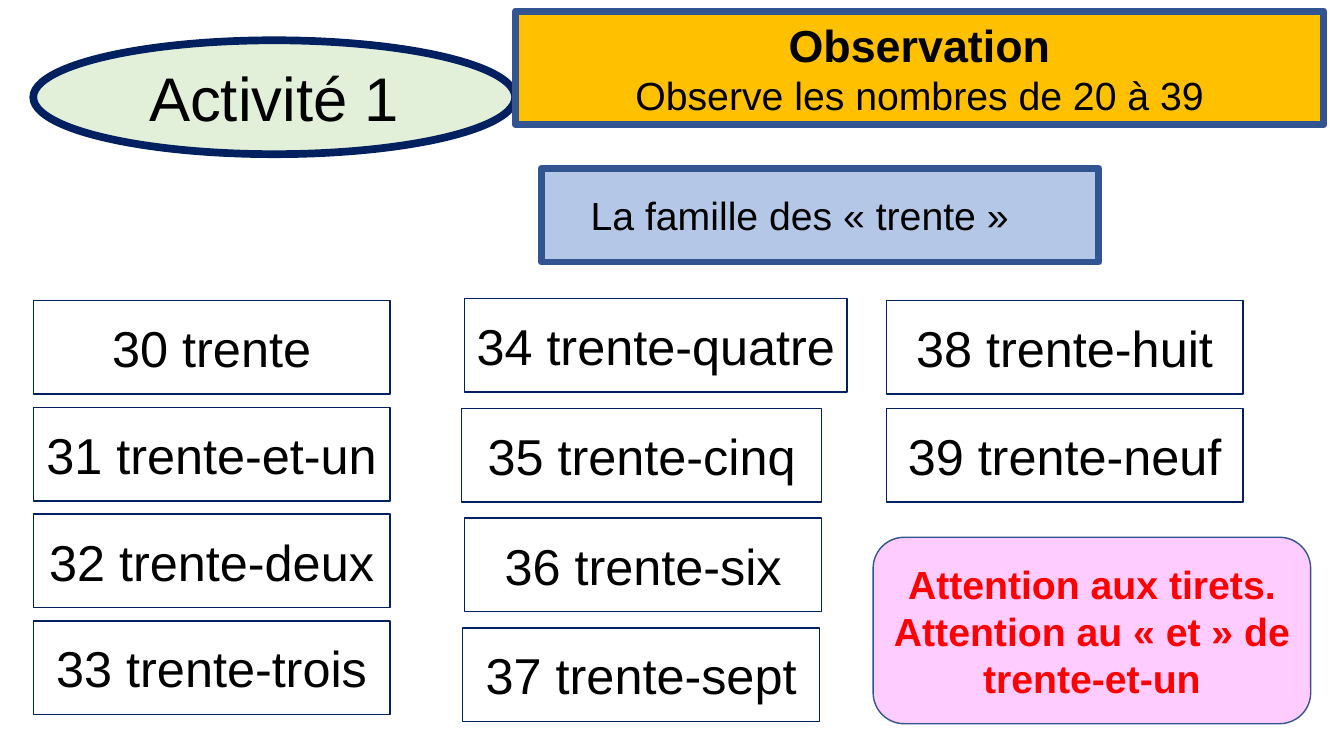
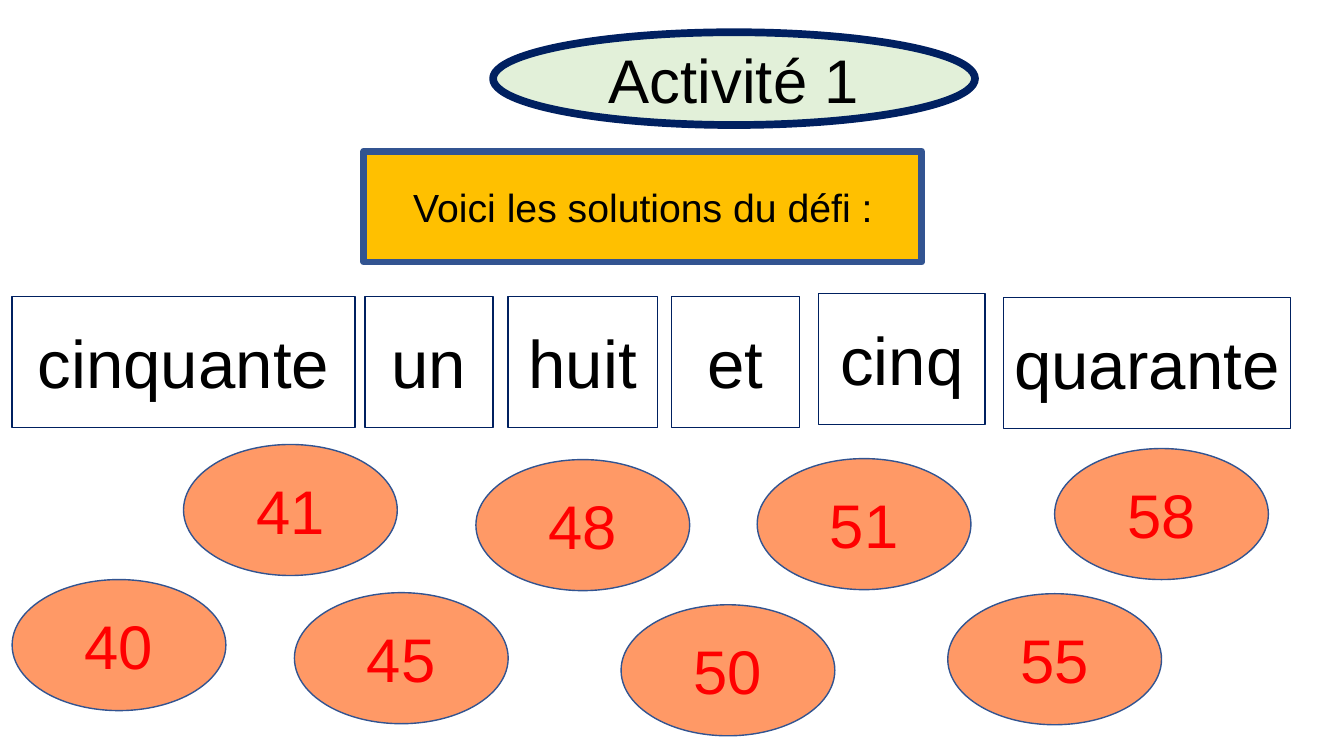
from dataclasses import dataclass

from pptx import Presentation
from pptx.dml.color import RGBColor
from pptx.enum.shapes import MSO_SHAPE
from pptx.enum.text import MSO_ANCHOR, PP_ALIGN
from pptx.util import Pt

RECT, OVAL, ROUNDED = MSO_SHAPE.RECTANGLE, MSO_SHAPE.OVAL, MSO_SHAPE.ROUNDED_RECTANGLE
CENTER, LEFT = PP_ALIGN.CENTER, PP_ALIGN.LEFT
MIDDLE = MSO_ANCHOR.MIDDLE
PX = 9144


@dataclass(frozen=True)
class Theme:
    font: str = "Arial"
    black: str = "000000"
    white: str = "FFFFFF"
    red: str = "FF0000"
    navy: str = "002060"
    blue: str = "325491"
    green: str = "E2F0D9"
    gold: str = "FFC000"
    sky: str = "B4C7E7"
    pink: str = "FFCCFF"
    orange: str = "FF9966"
    activity: int = 44
    heading: int = 32
    body: int = 28
    number: int = 36
    word: int = 48
    thin: float = 1
    thick: float = 5
    ring: float = 5.5


theme = Theme()

STYLES = {
    "activity": (OVAL, theme.green, theme.navy, theme.ring, theme.black),
    "instruction": (RECT, theme.gold, theme.blue, theme.thick, theme.black),
    "family": (RECT, theme.sky, theme.blue, theme.thick, theme.black),
    "card": (RECT, theme.white, theme.navy, theme.thin, theme.black),
    "warning": (ROUNDED, theme.pink, theme.blue, theme.thin, theme.red),
    "solution": (OVAL, theme.orange, theme.blue, theme.thin, theme.red),
}


def add_panel(slide, style, box, lines, indent=0):
    outline, fill, border, weight, ink = STYLES[style]
    panel = slide.shapes.add_shape(outline, *(side * PX for side in box))
    panel.shadow.inherit = False
    panel.fill.solid()
    panel.fill.fore_color.rgb = RGBColor.from_string(fill)
    panel.line.color.rgb = RGBColor.from_string(border)
    panel.line.width = Pt(weight)
    frame = panel.text_frame
    frame.word_wrap = True
    frame.vertical_anchor = MIDDLE
    for index, (text, size, bold) in enumerate(lines):
        paragraph = frame.add_paragraph() if index else frame.paragraphs[0]
        paragraph.alignment = LEFT if indent else CENTER
        if indent:
            paragraph._p.get_or_add_pPr().set("marL", str(indent * PX))
        run = paragraph.add_run()
        run.text = text
        run.font.color.rgb = RGBColor.from_string(ink)
        for name, value in {"name": theme.font, "size": Pt(size), "bold": bold}.items():
            setattr(run.font, name, value)


deck = Presentation()
deck.slide_width, deck.slide_height = 1333 * PX, 750 * PX
blank = deck.slide_layouts[6]
family_slide, solutions_slide = (deck.slides.add_slide(blank) for _ in range(2))

for slide, box in (
    (family_slide, (33, 40, 478, 113)),
    (solutions_slide, (489, 32, 478, 92)),
):
    add_panel(slide, "activity", box, [("Activité 1", theme.activity, False)])

add_panel(family_slide, "instruction", (511, 11, 802, 113), [
    ("Observation", theme.heading, True),
    ("Observe les nombres de 20 à 39", theme.body, False),
])
add_panel(family_slide, "family", (537, 167, 553, 93),
          [("La famille des « trente »", theme.body, False)], indent=39)

NUMBER_COLUMNS = [
    (298, 106, [(33, 354, "30 trente"), (33, 354, "31 trente-et-un"),
                (33, 354, "32 trente-deux"), (33, 354, "33 trente-trois")]),
    (296, 109, [(461, 379, "34 trente-quatre"), (458, 357, "35 trente-cinq"),
                (461, 354, "36 trente-six"), (459, 354, "37 trente-sept")]),
    (298, 107, [(879, 354, "38 trente-huit"), (879, 354, "39 trente-neuf")]),
]
for top, pitch, numbers in NUMBER_COLUMNS:
    for row, (left, width, number) in enumerate(numbers):
        add_panel(family_slide, "card", (left, top + row * pitch, width, 93),
                  [(number, theme.number, False)])

add_panel(family_slide, "warning", (866, 533, 434, 185), [
    ("Attention aux tirets.", theme.body, True),
    ("Attention au « et » de trente-et-un", theme.body, True),
])

add_panel(solutions_slide, "instruction", (361, 150, 553, 110),
          [("Voici les solutions du défi :", theme.body, False)], indent=39)

WORDS = [
    (12, 294, 340, "cinquante"),
    (362, 294, 127, "un"),
    (504, 294, 148, "huit"),
    (666, 294, 127, "et"),
    (812, 291, 165, "cinq"),
    (995, 295, 285, "quarante"),
]
for left, top, width, word in WORDS:
    add_panel(solutions_slide, "card", (left, top, width, 130),
              [(word, theme.word, False)])

SOLUTIONS = [
    (12, 575, "40"), (182, 441, "41"), (292, 588, "45"), (472, 456, "48"),
    (616, 600, "50"), (751, 455, "51"), (940, 589, "55"), (1046, 445, "58"),
]
for left, top, solution in SOLUTIONS:
    add_panel(solutions_slide, "solution", (left, top, 212, 130),
              [(solution, theme.activity, False)])

deck.save("out.pptx")
